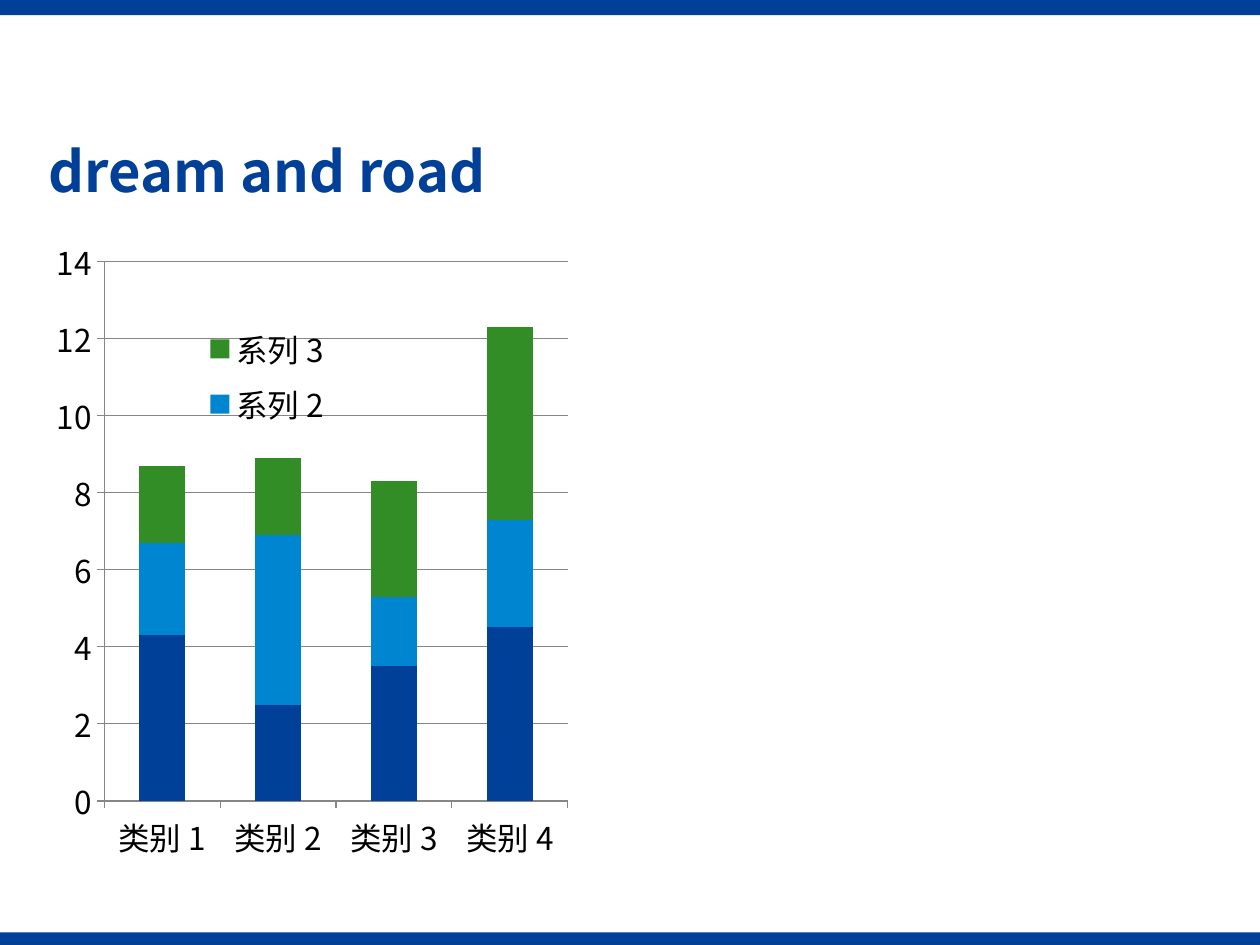
from lxml import etree
from pptx import Presentation
from pptx import util as u
from pptx.chart.data import CategoryChartData
from pptx.dml.color import RGBColor
from pptx.enum import chart as ch, shapes, text
from pptx.oxml import parse_xml
from pptx.oxml.ns import nsdecls, qn

FONT = "Noto Sans CJK SC"
INK = {"navy": "004098", "sky": "0086D1", "green": "338D27",
       "grey": "868686", "black": "000000"}
WIDE, HIGH = u.Inches(10), u.Inches(7.5)
CATS = ["类别 1", "类别 2", "类别 3", "类别 4"]
DATA = [("系列 1", "navy", (4.3, 2.5, 3.5, 4.5)),
        ("系列 2", "sky", (2.4, 4.4, 1.8, 2.8)),
        ("系列 3", "green", (2, 2, 3, 5))]


def hue(name):
    return RGBColor.from_string(INK[name])


def area(x, y, w, h):
    """Turn inches into a box of left, top, width and height."""
    return [u.Inches(n) for n in (x, y, w, h)]


def add_bar(slide, box):
    bar = slide.shapes.add_shape(shapes.MSO_SHAPE.RECTANGLE, *box)
    bar.shadow.inherit = False
    bar.fill.solid()
    bar.fill.fore_color.rgb = hue("navy")
    bar.line.fill.background()


def add_title(slide, box, words):
    frame = slide.shapes.add_textbox(*box).text_frame
    frame.word_wrap = True
    frame.vertical_anchor = text.MSO_ANCHOR.MIDDLE
    para = frame.paragraphs[0]
    para.text = words
    para.line_spacing = 0.9
    font = para.font
    font.name, font.size, font.bold = FONT, u.Pt(32), True
    font.color.rgb = hue("navy")


def layout(shares, inner=False):
    """Build a manual layout from shares of the chart's size."""
    target = '<c:layoutTarget val="inner"/>' if inner else ""
    modes = "".join(f'<c:{k}Mode val="edge"/>' for k in "xy")
    sizes = "".join(f'<c:{k} val="{v}"/>' for k, v in zip("xywh", shares))
    return parse_xml(f'<c:layout {nsdecls("c")}><c:manualLayout>{target}'
                     f'{modes}{sizes}</c:manualLayout></c:layout>')


def place(part, new, after=None):
    """Swap in a layout, first in the part or after a given child."""
    for old in part.findall(qn("c:layout")):
        part.remove(old)
    if after is None:
        part.insert(0, new)
    else:
        after.addnext(new)


def style_axis(axis, grid):
    axis.major_tick_mark = ch.XL_TICK_MARK.OUTSIDE
    axis.minor_tick_mark = ch.XL_TICK_MARK.NONE
    axis.has_major_gridlines = grid
    lines = [axis.format.line]
    if grid:
        lines.append(axis.major_gridlines.format.line)
    for line in lines:
        line.color.rgb = hue("grey")
        line.width = u.Pt(0.75)


def add_legend(chart):
    """Show a legend inside the plot, without the first series."""
    chart.has_legend = True
    legend = chart.legend
    legend.position = ch.XL_LEGEND_POSITION.RIGHT
    legend.include_in_layout = False
    root = legend._element
    entry = parse_xml(f'<c:legendEntry {nsdecls("c")}><c:idx val="0"/>'
                      '<c:delete val="1"/></c:legendEntry>')
    root.find(qn("c:legendPos")).addnext(entry)
    place(root, layout((0.29, 0.12, 0.25, 0.18)), entry)


def add_stack(slide, box):
    data = CategoryChartData()
    data.categories = CATS
    for name, _, vals in DATA:
        data.add_series(name, vals)
    kind = ch.XL_CHART_TYPE.COLUMN_STACKED
    chart = slide.shapes.add_chart(kind, *box, data).chart
    chart.has_title = False
    font = chart.font
    font.name, font.size = FONT, u.Pt(18)
    font.color.rgb = hue("black")
    latin = font._element.find(qn("a:latin"))
    east = etree.Element(qn("a:ea"), typeface=FONT)
    latin.addnext(east)

    plot = chart.plots[0]
    plot.gap_width, plot.overlap = 150, 100
    plot.vary_by_categories = False
    for series, (_, tone, _) in zip(plot.series, DATA):
        series.format.fill.solid()
        series.format.fill.fore_color.rgb = hue(tone)
    style_axis(chart.category_axis, False)
    style_axis(chart.value_axis, True)
    scale = chart.value_axis
    scale.minimum_scale, scale.maximum_scale, scale.major_unit = 0, 14, 2
    area_root = chart._chartSpace.chart.plotArea
    place(area_root, layout((0.122, 0.037, 0.834, 0.811), True))
    add_legend(chart)


def main():
    deck = Presentation()
    deck.slide_width, deck.slide_height = WIDE, HIGH
    slide = deck.slides.add_slide(deck.slide_layouts[6])
    add_bar(slide, area(0, 7.4, 10, 0.1))
    add_bar(slide, area(0, 0, 10, 0.12))
    add_title(slide, area(0.29, 1.07, 9.36, 0.63), "dream and road")
    add_stack(slide, area(0.29, 1.88, 4.41, 5.28))
    deck.save("out.pptx")


if __name__ == "__main__":
    main()
